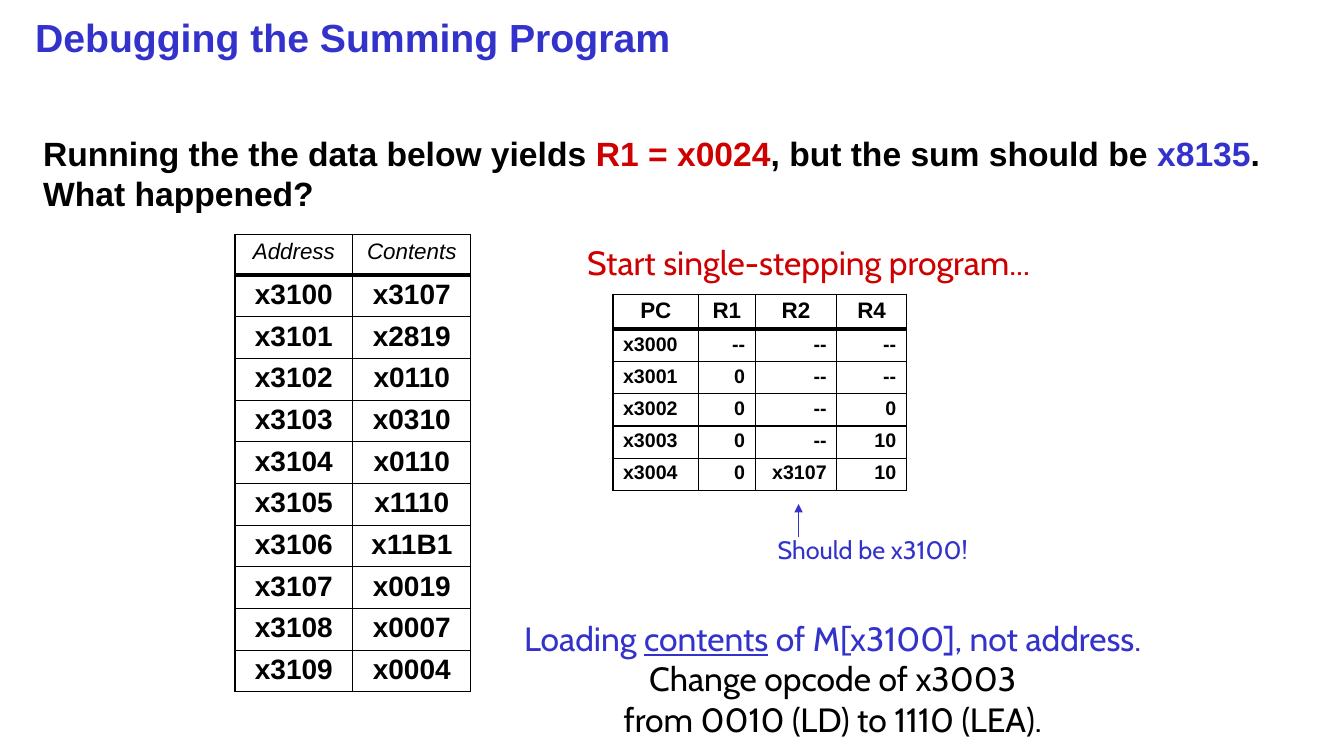
from lxml import etree
from pptx import Presentation
from pptx.dml.color import RGBColor
from pptx.enum.shapes import MSO_CONNECTOR
from pptx.enum.text import MSO_ANCHOR, MSO_AUTO_SIZE, PP_ALIGN
from pptx.oxml.ns import qn
from pptx.util import Inches, Pt

LEFT, CENTER, RIGHT = PP_ALIGN.LEFT, PP_ALIGN.CENTER, PP_ALIGN.RIGHT
STRAIGHT = MSO_CONNECTOR.STRAIGHT
COLORS = {"blue": "3333CC", "red": "CE0000", "black": "000000"}

prs = Presentation()
prs.slide_width, prs.slide_height = Inches(13.33), Inches(7.5)
slide = prs.slides.add_slide(prs.slide_layouts[6])


def add_text(box, paragraphs, size, font, bold=False, align=LEFT, fit=False):
    """Add a text box; each paragraph is a list of (text, color, underline) runs."""
    tf = slide.shapes.add_textbox(*map(Inches, box)).text_frame
    tf.word_wrap = not fit
    if fit:
        tf.auto_size = MSO_AUTO_SIZE.SHAPE_TO_FIT_TEXT
    for i, runs in enumerate(paragraphs):
        p = tf.add_paragraph() if i else tf.paragraphs[0]
        p.alignment = align
        p.font.size, p.font.name, p.font.bold = Pt(size), font, bold
        for text, color, underline in runs:
            r = p.add_run()
            r.text = text
            r.font.color.rgb = RGBColor.from_string(COLORS[color])
            if underline:
                r.font.underline = True
    return tf


def add_grid(left, top, widths, heights, rows, header_style, body_size, aligns):
    """Add a ruled table with a heavy line below its header row."""
    header_height, row_height = heights
    total = header_height + row_height * (len(rows) - 1)
    table = slide.shapes.add_table(
        len(rows), len(widths), Inches(left), Inches(top),
        Inches(sum(widths)), Inches(total)).table
    table.first_row = table.horz_banding = False
    for column, width in zip(table.columns, widths):
        column.width = Inches(width)
    for i, row in enumerate(rows):
        table.rows[i].height = Inches(row_height if i else header_height)
        for j, text in enumerate(row):
            cell = table.cell(i, j)
            cell.margin_top = cell.margin_bottom = Inches(0.04)
            p = cell.text_frame.paragraphs[0]
            p.text = text
            p.alignment = aligns[j] if i else CENTER
            p.font.name = "Arial"
            p.font.size = Pt(body_size if i else 16)
            p.font.bold = i > 0 or header_style == "bold"
            p.font.italic = i == 0 and header_style == "italic"
            p.font.color.rgb = RGBColor.from_string(COLORS["black"])
            tc_pr = cell._tc.get_or_add_tcPr()
            for side in ("lnL", "lnR", "lnT", "lnB"):
                heavy = (i, side) in ((0, "lnB"), (1, "lnT"))
                ln = etree.SubElement(tc_pr, qn(f"a:{side}"), w=str(Pt(3 if heavy else 1)))
                fill = etree.SubElement(ln, qn("a:solidFill"))
                etree.SubElement(fill, qn("a:srgbClr"), val=COLORS["black"])
            cell.fill.background()


title = add_text((0.25, 0.08, 12.67, 0.58),
                 [[("Debugging the Summing Program", "blue", False)]], 28, "Arial", bold=True)
title.vertical_anchor = MSO_ANCHOR.MIDDLE

add_text((0.33, 1.27, 12.59, 0.9), [[
    ("Running the the data below yields ", "black", False),
    ("R1 = x0024", "red", False),
    (", but the sum should be ", "black", False),
    ("x8135", "blue", False),
    (". What happened?", "black", False),
]], 24, "Arial", bold=True)

contents = ["x3107", "x2819", "x0110", "x0310", "x0110",
            "x1110", "x11B1", "x0019", "x0007", "x0004"]
memory = [("Address", "Contents")]
memory += [(f"x{3100 + i}", value) for i, value in enumerate(contents)]
add_grid(2.33, 2.33, [1.17] * 2, (0.4, 0.41), memory, "italic", 20, [CENTER] * 2)

trace = [
    ("PC", "R1", "R2", "R4"),
    ("x3000", "--", "--", "--"),
    ("x3001", "0", "--", "--"),
    ("x3002", "0", "--", "0"),
    ("x3003", "0", "--", "10"),
    ("x3004", "0", "x3107", "10"),
]
add_grid(6.08, 2.92, [0.85, 0.56, 0.81, 0.69], (0.34, 0.32), trace, "bold", 14,
         [LEFT] + [RIGHT] * 3)

add_text((5.56, 2.35, 4.92, 0.5), [[("Start single-stepping program...", "red", False)]],
         24, "Cabin", align=CENTER, fit=True)
add_text((7.58, 5.25, 2.15, 0.4), [[("Should be x3100!", "blue", False)]],
         18, "Cabin", align=CENTER, fit=True)

arrow = slide.shapes.add_connector(STRAIGHT, Inches(7.92), Inches(5.33), Inches(7.92), Inches(5))
arrow.line.color.rgb = RGBColor.from_string(COLORS["blue"])
arrow.line.width = Pt(0.75)
etree.SubElement(arrow.line._get_or_add_ln(), qn("a:tailEnd"), type="triangle")
etree.SubElement(arrow._element.spPr, qn("a:effectLst"))

add_text((4.91, 6.08, 6.7, 1.31), [
    [("Loading ", "blue", False), ("contents", "blue", True),
     (" of M[x3100], not address.", "blue", False)],
    [("Change opcode of x3003", "black", False)],
    [("from 0010 (LD) to 1110 (LEA).", "black", False)],
], 24, "Cabin", align=CENTER, fit=True)

prs.save("out.pptx")
